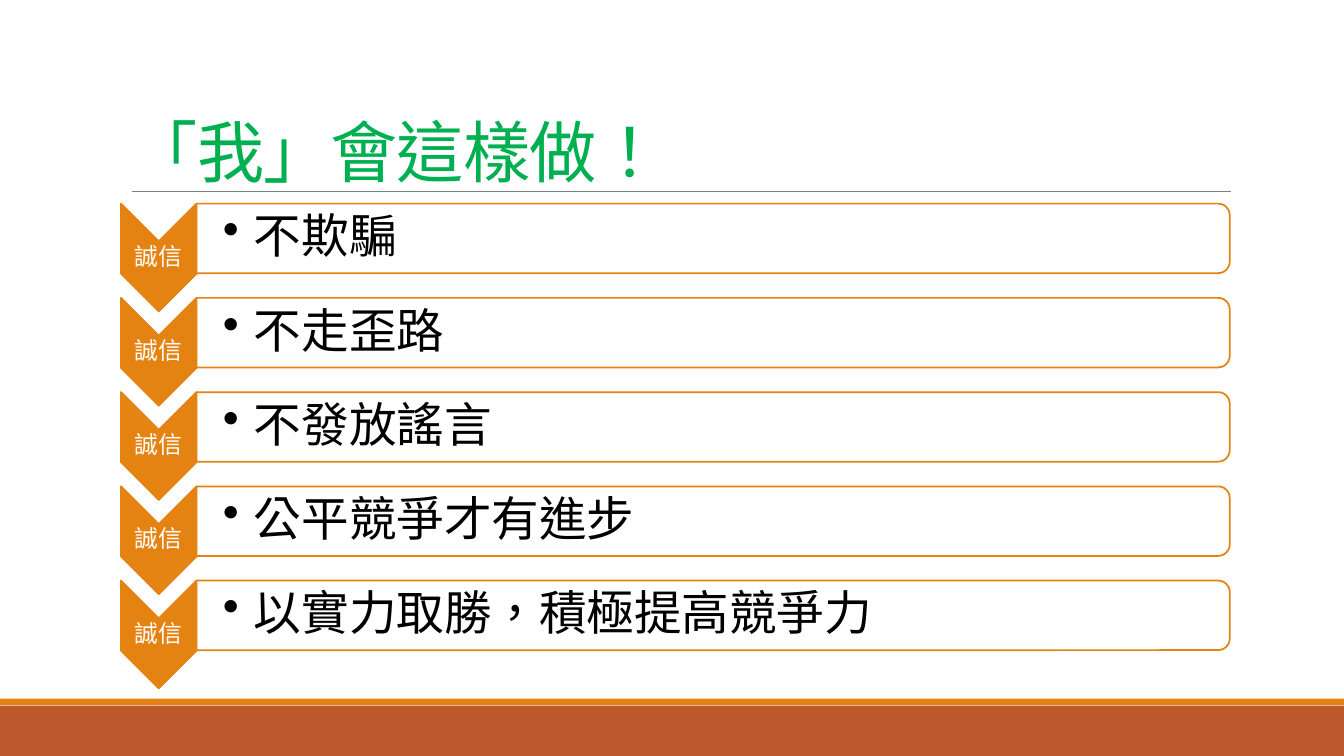
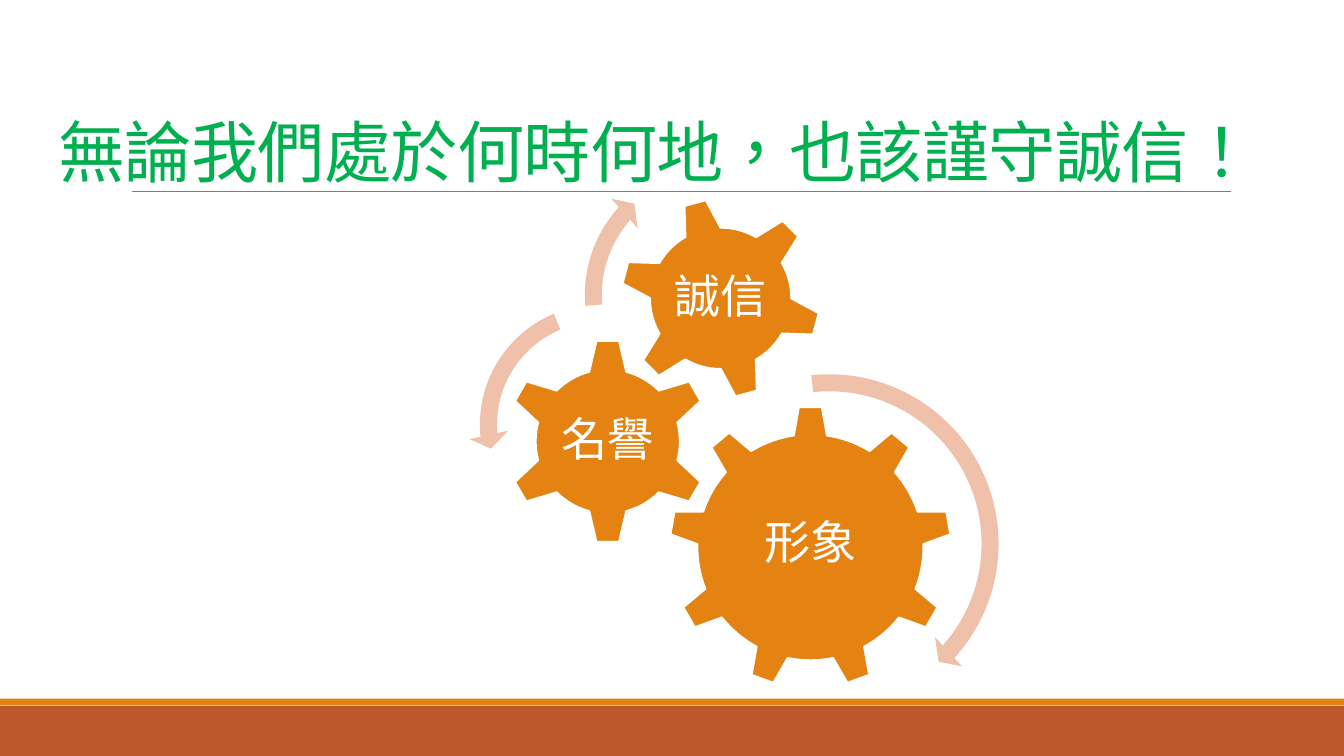
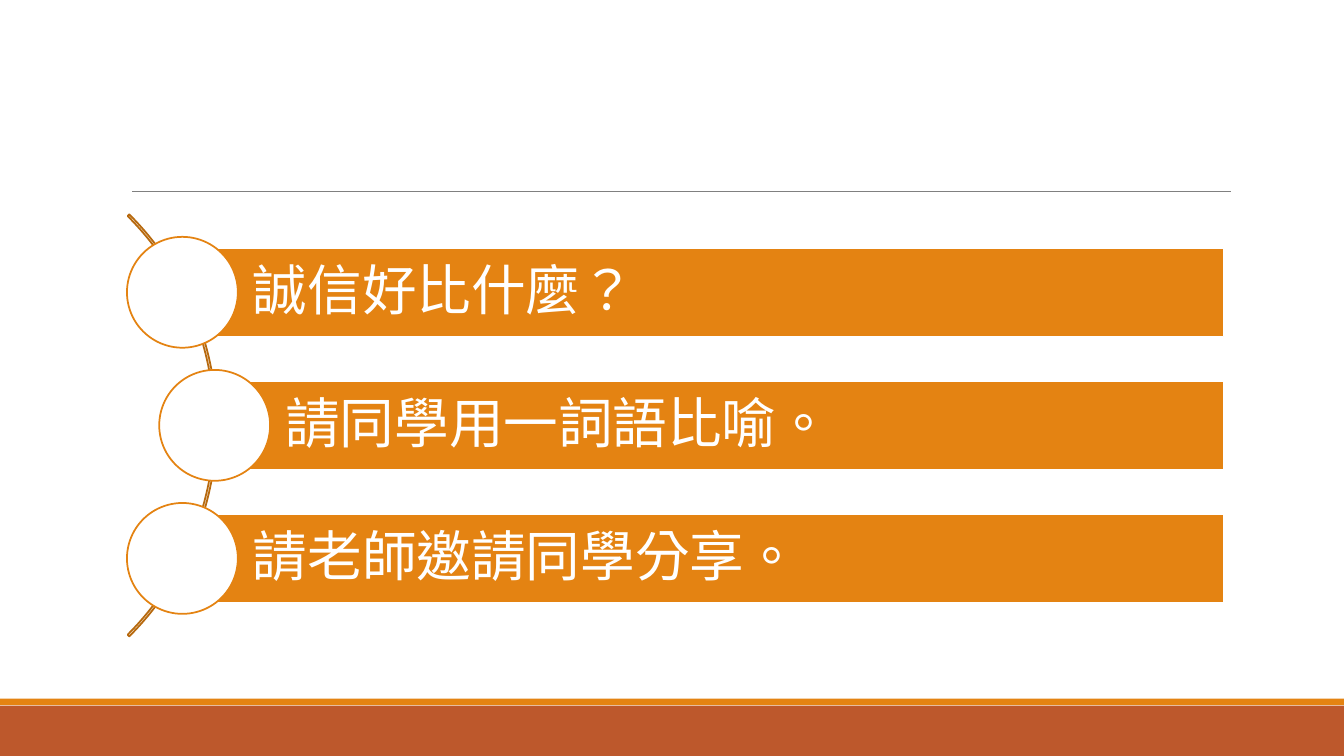
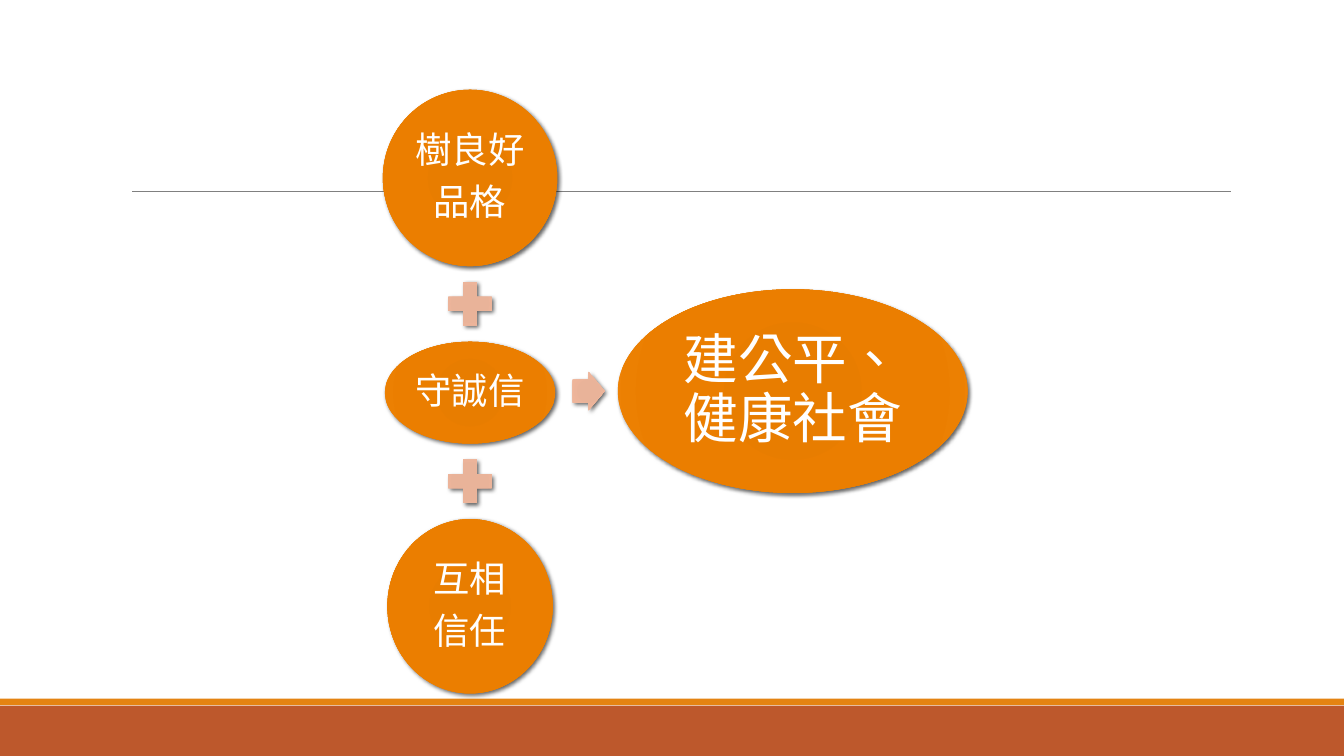
from lxml import etree
from pptx import Presentation
from pptx.dml.color import RGBColor
from pptx.enum.shapes import MSO_CONNECTOR, MSO_SHAPE
from pptx.enum.text import MSO_ANCHOR, PP_ALIGN
from pptx.oxml.ns import qn
from pptx.util import Inches, Pt

RECTANGLE, ELLIPSE = MSO_SHAPE.RECTANGLE, MSO_SHAPE.OVAL
CHEVRON, TAB = MSO_SHAPE.CHEVRON, MSO_SHAPE.ROUND_2_SAME_RECTANGLE
GEAR_6, GEAR_9 = MSO_SHAPE.GEAR_6, MSO_SHAPE.GEAR_9
TURN_RIGHT, TURN_LEFT = MSO_SHAPE.CIRCULAR_ARROW, MSO_SHAPE.LEFT_CIRCULAR_ARROW
ARC, PLUS, ARROW = MSO_SHAPE.BLOCK_ARC, MSO_SHAPE.MATH_PLUS, MSO_SHAPE.RIGHT_ARROW
STRAIGHT = MSO_CONNECTOR.STRAIGHT
LEFT, CENTER = PP_ALIGN.LEFT, PP_ALIGN.CENTER
MIDDLE, BOTTOM = MSO_ANCHOR.MIDDLE, MSO_ANCHOR.BOTTOM

COLUMNS, ROWS = 160, 90
BODY_FONT, TITLE_FONT = "Calibri", "Noto Sans CJK SC"
WHITE, BLACK, GREEN, GRAY = "FFFFFF", "000000", "00B050", "808080"
ORANGE, RUST, PEACH, BROWN = "E48312", "BD582C", "EFC1AB", "B7690E"
GLOSSY_ORANGE = ("E57B00", "E87D00", "EB7E00", "EF8407")
GLOSSY_PEACH = ("E8B196", "E9B399", "EEB59A", "F3C0A8")
GRADIENT_STOPS = (0, 34, 70, 100)


def color(value):
    return RGBColor.from_string(value)


def add_child(parent, tag, **attributes):
    element = etree.SubElement(parent, qn(tag))
    for name, value in attributes.items():
        element.set(name, str(value))
    return element


def set_all(target, values):
    for name, value in values.items():
        setattr(target, name, value)


class Deck:
    """Holds the style and the current slide; boxes are (column, row, columns, rows)."""

    def __init__(self):
        self.presentation = Presentation()
        self.presentation.slide_width = Inches(40 / 3)
        self.presentation.slide_height = Inches(7.5)
        self.slide = None

    def place(self, box):
        """Turn grid cells into slide lengths."""
        cell_width = self.presentation.slide_width / COLUMNS
        cell_height = self.presentation.slide_height / ROWS
        return [round(length * cell)
                for length, cell in zip(box, (cell_width, cell_height) * 2)]

    def new_slide(self):
        self.slide = self.presentation.slides.add_slide(
            self.presentation.slide_layouts[6])
        self.shape(RECTANGLE, (0, 84, COLUMNS, 6), RUST)
        self.shape(RECTANGLE, (0, 83.16, COLUMNS, 0.8), ORANGE)
        rule = self.slide.shapes.add_connector(
            STRAIGHT, *self.place((15.72, 22.8, 146.52, 22.8)))
        rule.line.color.rgb = color(GRAY)
        rule.line.width = Pt(0.5)
        add_child(rule._element.spPr, "a:effectLst")

    def title(self, text, left, width):
        self.text((left, 3.72, width, 19.08), text, 48, GREEN, font=TITLE_FONT,
                  anchor=BOTTOM, spacing=0.85, after=0, tracking=-50,
                  insets=(0.1, 0.05, 0.1, 0))

    def shape(self, kind, box, fill=None, line=None, rotation=0, adjustments=(),
              opacity=None):
        shape = self.slide.shapes.add_shape(kind, *self.place(box))
        shape.rotation = rotation
        shape.shadow.inherit = False
        for index, value in enumerate(adjustments):
            shape.adjustments[index] = value
        if fill:
            shape.fill.solid()
            shape.fill.fore_color.rgb = color(fill)
            if opacity:
                solid = shape._element.spPr.find(qn("a:solidFill"))
                add_child(solid[0], "a:alpha", val=opacity * 1000)
        else:
            shape.fill.background()
        if line:
            shape.line.color.rgb = color(line)
            shape.line.width = Pt(1.25)
        else:
            shape.line.fill.background()
        return shape

    def upright(self, kind, box, **style):
        """Draw a shape turned a quarter so that it covers the given box."""
        left, top, width, height = box
        shift = (width - height) / 2
        self.shape(kind, (left + shift, top - shift, height, width),
                   rotation=90, **style)

    def glossy(self, kind, box, colors, adjustments=()):
        """Draw a shape with a round gradient and a soft shadow."""
        shape = self.shape(kind, box, adjustments=adjustments)
        properties = shape._element.spPr
        gradient = etree.Element(qn("a:gradFill"), rotWithShape="1")
        stops = add_child(gradient, "a:gsLst")
        for position, value in zip(GRADIENT_STOPS, colors):
            stop = add_child(stops, "a:gs", pos=position * 1000)
            add_child(stop, "a:srgbClr", val=value)
        focus = add_child(gradient, "a:path", path="circle")
        add_child(focus, "a:fillToRect", **dict.fromkeys("ltrb", 100000))
        properties.replace(properties.find(qn("a:noFill")), gradient)
        shadow = add_child(properties.find(qn("a:effectLst")), "a:outerShdw",
                           blurRad=int(Pt(3)), dist=int(Pt(2)), dir=45 * 60000,
                           algn="ctr", rotWithShape=0)
        add_child(add_child(shadow, "a:srgbClr", val=BLACK), "a:alpha", val=60000)
        return shape

    def text(self, box, text, size, ink, **style):
        textbox = self.slide.shapes.add_textbox(*self.place(box))
        self.label(textbox, text, size, ink, **style)

    def label(self, shape, text, size, ink=WHITE, font=BODY_FONT, align=LEFT,
              anchor=MIDDLE, insets=(0.05,) * 4, spacing=0.9, after=0.35,
              tracking=0, bullet=None):
        """Fill a shape with text, one paragraph to a line."""
        frame = shape.text_frame
        sides = ("margin_left", "margin_top", "margin_right", "margin_bottom")
        set_all(frame, dict(zip(sides, map(Inches, insets)),
                            word_wrap=True, vertical_anchor=anchor, text=text))
        for paragraph in frame.paragraphs:
            set_all(paragraph, {"alignment": align, "line_spacing": spacing,
                                "space_after": Pt(round(size * after, 1))})
            if bullet:
                properties = paragraph._p.get_or_add_pPr()
                properties.set("marL", str(int(Inches(0.31))))
                properties.set("indent", str(-int(Inches(0.31))))
                add_child(properties, "a:buChar", char=bullet)
            run = paragraph.runs[0]
            set_all(run.font, {"name": font, "size": Pt(size)})
            run.font.color.rgb = color(ink)
            properties = run._r.get_or_add_rPr()
            properties.set("lang", "zh-TW")
            if tracking:
                properties.set("spc", str(tracking))
            add_child(properties, "a:ea", typeface=font)


def promises_slide(deck):
    deck.new_slide()
    deck.title("「我」會這樣做！", 14.4, 132)
    promises = ("不欺騙", "不走歪路", "不發放謠言", "公平競爭才有進步",
                "以實力取勝，積極提高競爭力")
    for index, promise in enumerate(promises):
        top = 24.24 + index * 11.22
        tag, bar = (14.4, top, 9, 12.84), (23.4, top, 123, 8.28)
        deck.upright(CHEVRON, tag, fill=ORANGE, line=ORANGE)
        deck.text(tag, "誠信", 17, WHITE, align=CENTER, insets=(0.01,) * 4)
        deck.upright(TAB, bar, fill=WHITE, line=ORANGE, opacity=90)
        deck.text(bar, promise, 34, BLACK, after=0.15, bullet="•",
                  insets=(0.26, 0.02, 0.02, 0.02))


def gears_slide(deck):
    deck.new_slide()
    deck.title("無論我們處於何時何地，也該謹守誠信！", 5.76, 140.64)
    gears = (("形象", GEAR_9, 79.68, 48.36, 33.6, 0, 0.36),
             ("名譽", GEAR_6, 60.12, 40.32, 24.48, 0, 0),
             ("誠信", GEAR_6, 73.8, 23.52, 24, 345, 0))
    for label, kind, left, top, size, rotation, lift in gears:
        deck.shape(kind, (left, top, size, size), ORANGE, WHITE, rotation)
        deck.text((left, top - lift, size, size), label, 33, WHITE, align=CENTER)
    arrows = (
        (TURN_RIGHT, 77.16, 43.2, 43.08, (0.047, 2.99, 25.263, 158.396, 0.055)),
        (TURN_LEFT, 55.8, 34.92, 31.32, (0.065, 4.3, 104.891, 148.378, 0.075)),
        (TURN_RIGHT, 68.28, 18.24, 33.72, (0.06, 3.941, 133.138, 105.082, 0.07)))
    for kind, left, top, size, adjustments in arrows:
        deck.shape(kind, (left, top, size, size), PEACH, adjustments=adjustments)


def questions_slide(deck):
    deck.new_slide()
    deck.shape(ARC, (-45.24, 15.12, 71.04, 71.04), line=BROWN,
               adjustments=(189, 27, 0.004))
    right, height, circle = 145.68, 10.56, 13.2
    questions = ((21.72, "誠信好比什麼？"), (25.56, "請同學用一詞語比喻。"),
                 (21.72, "請老師邀請同學分享。"))
    for index, (left, question) in enumerate(questions):
        top = 29.52 + index * 15.84
        bar = deck.shape(RECTANGLE, (left, top, right - left, height), ORANGE, WHITE)
        deck.label(bar, question, 39, insets=(0.7, 0.11, 0.11, 0.11))
        deck.shape(ELLIPSE, (left - circle / 2, top + (height - circle) / 2,
                             circle, circle), WHITE, ORANGE)


def society_slide(deck):
    deck.new_slide()
    center, top, gap = 55.96, 10.68, 1
    stack = (("樹良好\n品格", 20.76, 21), (None, 7, 7), ("守誠信", 20.28, 12.12),
             (None, 7, 7), ("互相\n信任", 19.68, 20.76))
    for label, width, height in stack:
        box = (center - width / 2, top, width, height)
        if label:
            oval = deck.glossy(ELLIPSE, box, GLOSSY_ORANGE)
            deck.label(oval, label, 26, align=CENTER, insets=(0.04,) * 4)
        else:
            deck.glossy(PLUS, box, GLOSSY_PEACH)
        top += height + gap
    deck.glossy(ARROW, (68.16, 44.28, 3.84, 4.56), GLOSSY_PEACH, (0.6, 0.5))
    result = deck.glossy(ELLIPSE, (73.56, 34.44, 41.64, 24.24), GLOSSY_ORANGE)
    deck.label(result, "建公平、健康社會", 39, align=CENTER)


def main():
    deck = Deck()
    for build in (promises_slide, gears_slide, questions_slide, society_slide):
        build(deck)
    deck.presentation.save("out.pptx")


if __name__ == "__main__":
    main()
